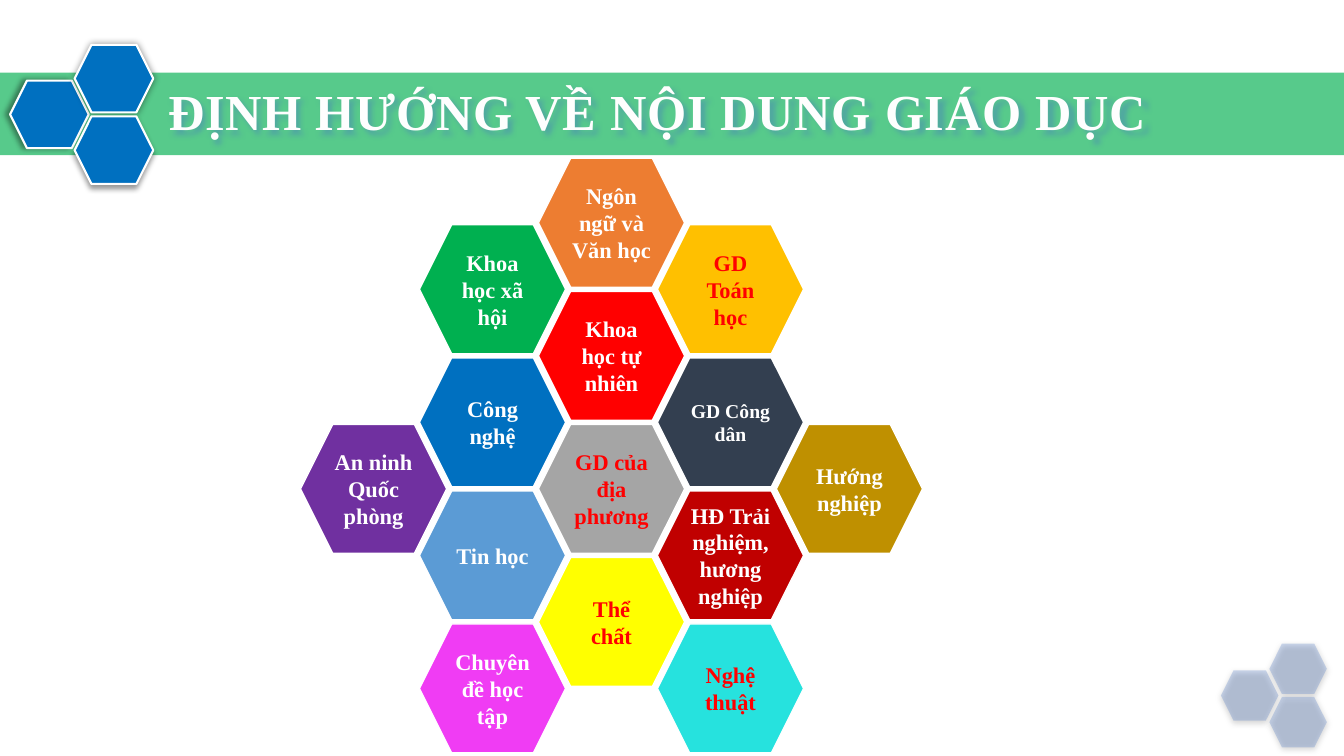
from lxml import etree
from pptx import Presentation
from pptx import util as u
from pptx.dml.color import RGBColor
from pptx.enum import shapes, text
from pptx.oxml import ns

WHITE = RGBColor(0xFF, 0xFF, 0xFF)
OFFWHITE = RGBColor(0xFE, 0xFE, 0xFE)
BLACK = RGBColor(0, 0, 0)
RED = RGBColor(0xFF, 0, 0)
GREEN = RGBColor(0, 0xB0, 0x50)
BLUE = RGBColor(0, 0x70, 0xC0)
INDIGO = RGBColor(0x44, 0x72, 0xC4)
GRAY = RGBColor(0xA5, 0xA5, 0xA5)
YELLOW = RGBColor(0xFF, 0xFF, 0)
SLATE = RGBColor(0x33, 0x3F, 0x50)
SKY = RGBColor(0x5B, 0x9B, 0xD5)
MAROON = RGBColor(0xC0, 0, 0)
PURPLE = RGBColor(0x70, 0x30, 0xA0)
OLIVE = RGBColor(0xBF, 0x90, 0)
CYAN = RGBColor(0x26, 0xE2, 0xDE)
GOLD = RGBColor(0xFF, 0xC0, 0)
PINK = RGBColor(0xF0, 0x3C, 0xF4)
ORANGE = RGBColor(0xED, 0x7D, 0x31)
FONT = "Times New Roman"
HEX = shapes.MSO_SHAPE.HEXAGON

deck = Presentation()
deck.slide_width, deck.slide_height = u.Inches(13.33), u.Inches(7.5)
slide = deck.slides.add_slide(deck.slide_layouts[6])


def block(home, kind, box, color, alpha=100, line=0):
    item = home.add_shape(kind, *map(u.Inches, box))
    item.shadow.inherit = False
    item.fill.solid()
    item.fill.fore_color.rgb = color
    if alpha < 100:
        tint = item.element.xpath("./p:spPr/a:solidFill/a:srgbClr")[0]
        etree.SubElement(tint, ns.qn("a:alpha"), val=str(alpha * 1000))
    if line:
        item.line.color.rgb = WHITE
        item.line.width = u.Pt(line)
    else:
        item.line.fill.background()
    return item


def shade(item, color, alpha, blur, dist, angle):
    item.shadow.inherit = False
    glow = item.element.xpath("./p:spPr/a:effectLst")[0]
    cast = etree.SubElement(
        glow, ns.qn("a:outerShdw"), blurRad=str(u.Pt(blur)),
        dist=str(u.Pt(dist)), dir=str(angle * 60000), rotWithShape="0")
    tint = etree.SubElement(cast, ns.qn("a:srgbClr"), val=str(color))
    etree.SubElement(tint, ns.qn("a:alpha"), val=str(alpha * 1000))


# Title band
block(slide.shapes, shapes.MSO_SHAPE.RECTANGLE, (0, 0.72, 13.33, 0.82), GREEN, 66)

# Corner clusters: one hexagon at the left, two stacked at its right
soft = (63, 4.5, 1.5, 90)
clusters = [
    (0.1, 0.8, 0.78, 0.67, 0.64, 0.355, BLUE, 100, 1.5,
     [(40, 4, 3, 180), (40, 5, 0, 0), (40, 4, 3, 90)]),
    (12.11, 6.65, 0.57, 0.5, 0.48, 0.265, INDIGO, 26, 0, [soft] * 3),
]
for left, top, wide, high, dx, dy, color, alpha, line, casts in clusters:
    group = slide.shapes.add_group_shape()
    for (col, row), cast in zip([(0, 0), (1, -1), (1, 1)], casts):
        box = (left + col * dx, top + row * dy, wide, high)
        shade(block(group.shapes, HEX, box, color, alpha, line), BLACK, *cast)

# Title
title = slide.shapes.add_textbox(*map(u.Inches, (1.52, 0.75, 10.01, 0.71)))
shade(title, INDIGO, 40, 4, 3, 45)
frame = title.text_frame
frame.word_wrap = False
frame.auto_size = text.MSO_AUTO_SIZE.SHAPE_TO_FIT_TEXT
para = frame.paragraphs[0]
para.alignment = text.PP_ALIGN.CENTER
run = para.add_run()
run.text = "ĐỊNH HƯỚNG VỀ NỘI DUNG GIÁO DỤC"
run.font.name, run.font.size, run.font.bold = FONT, u.Pt(36), True
run.font.color.rgb = OFFWHITE
run.font._element.set("spc", "50")

# Honeycomb of subjects: column, half row, label, fill, ink, size
LEFT, TOP, DX, DY = 2.98, 1.57, 1.18, 0.66
cells = [
    (2, 4, "GD của địa phương", GRAY, RED, 16),
    (2, 2, "Khoa học tự nhiên", RED, WHITE, 16),
    (2, 6, "Thể chất", YELLOW, RED, 16),
    (3, 3, "GD Công dân", SLATE, WHITE, 14),
    (1, 3, "Công nghệ", BLUE, WHITE, 16),
    (1, 5, "Tin học", SKY, WHITE, 16),
    (3, 5, "HĐ Trải nghiệm, hương nghiệp", MAROON, WHITE, 16),
    (0, 4, "An ninh Quốc phòng", PURPLE, WHITE, 16),
    (4, 4, "Hướng nghiệp", OLIVE, WHITE, 16),
    (1, 1, "Khoa học xã hội", GREEN, WHITE, 16),
    (3, 7, "Nghệ thuật", CYAN, RED, 16),
    (3, 1, "GD Toán học", GOLD, RED, 16),
    (1, 7, "Chuyên đề học tập", PINK, WHITE, 16),
    (2, 0, "Ngôn ngữ và Văn học", ORANGE, WHITE, 16),
]
for col, row, label, color, ink, size in cells:
    box = (LEFT + col * DX, TOP + row * DY, 1.45, 1.28)
    cell = block(slide.shapes, HEX, box, color, line=1)
    frame = cell.text_frame
    frame.word_wrap = True
    frame.vertical_anchor = text.MSO_ANCHOR.MIDDLE
    para = frame.paragraphs[0]
    para.alignment = text.PP_ALIGN.CENTER
    run = para.add_run()
    run.text = label
    run.font.name, run.font.size, run.font.bold = FONT, u.Pt(size), True
    run.font.color.rgb = ink

deck.save("out.pptx")
